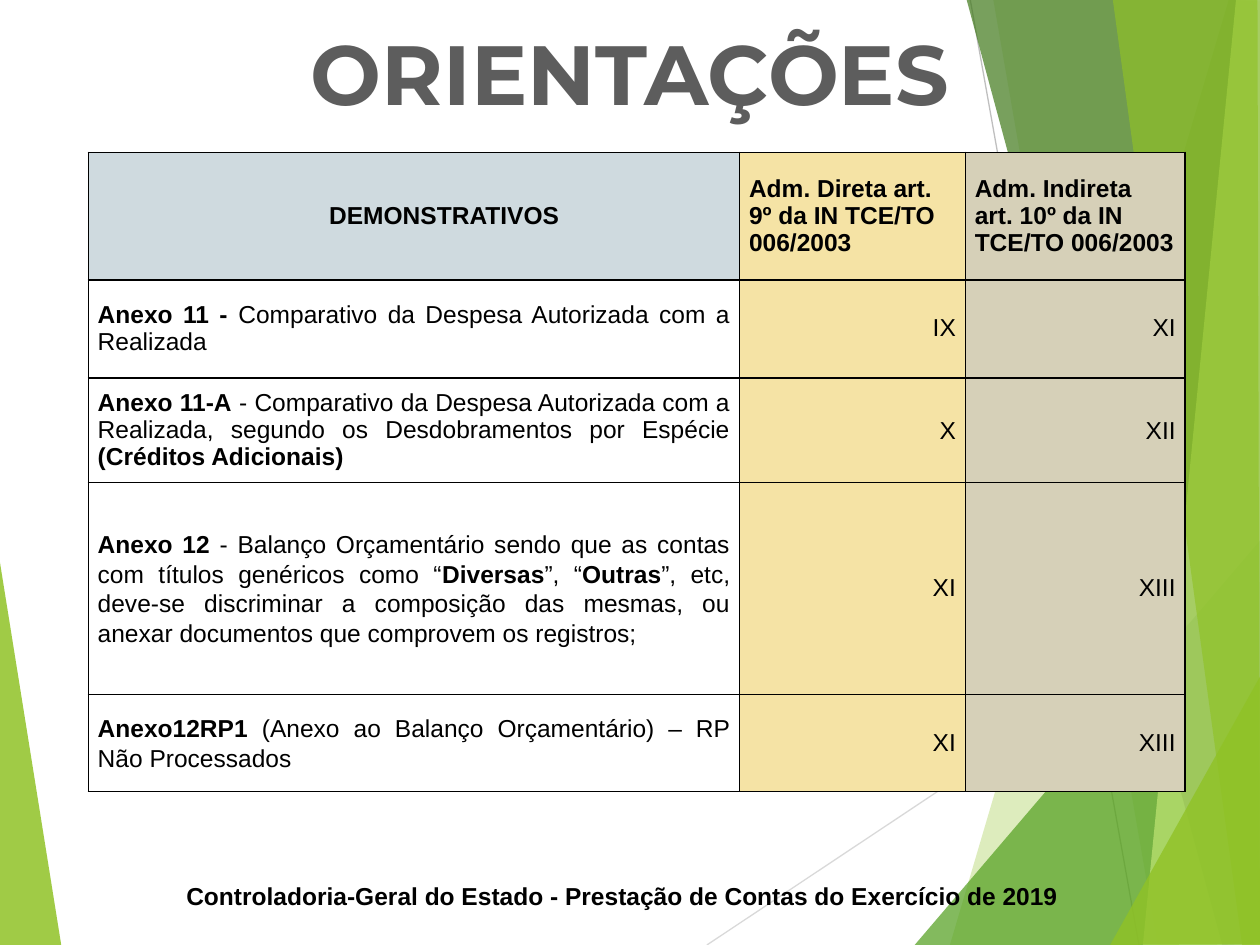
from lxml import etree
from pptx import Presentation
from pptx.dml.color import RGBColor
from pptx.enum import shapes, text
from pptx.oxml import ns
from pptx.util import Cm, Pt

# Colours
BLACK = RGBColor(0, 0, 0)
TITLE_GREY = RGBColor(0x5D, 0x5D, 0x5D)
LIME = RGBColor(0x90, 0xC2, 0x26)
GREEN = RGBColor(0x54, 0xA0, 0x21)
DARK_GREEN = RGBColor(0x3F, 0x78, 0x19)
PALE_LIME = RGBColor(0xC0, 0xE4, 0x74)
LIGHT_GREY = RGBColor(0xD9, 0xD9, 0xD9)
MID_GREY = RGBColor(0xBF, 0xBF, 0xBF)
BLUE_GREY = RGBColor(0xCF, 0xDA, 0xDF)
SAND = RGBColor(0xF5, 0xE3, 0xA5)
STONE = RGBColor(0xD6, 0xD0, 0xB8)

# Content: ** switches bold on and off
TITLE = "ORIENTAÇÕES"
FOOTER = "Controladoria-Geral do Estado - Prestação de Contas do Exercício de 2019"
HEADER = [
    "**DEMONSTRATIVOS**",
    "**Adm. Direta art. 9º da IN TCE/TO 006/2003**",
    "**Adm. Indireta art. 10º da IN**\n**TCE/TO 006/2003**",
]
ANNEXES = [
    ["**Anexo 11 - **Comparativo da Despesa Autorizada com a Realizada", "IX", "XI"],
    ["**Anexo 11-A** - Comparativo da Despesa Autorizada com a Realizada, "
     "segundo os Desdobramentos por Espécie **(Créditos Adicionais)**", "X", "XII"],
    ["**Anexo 12** - Balanço Orçamentário sendo que as contas com títulos "
     "genéricos como “**Diversas**”, “**Outras**”, etc, deve-se discriminar a "
     "composição das mesmas, ou anexar documentos que comprovem os registros;",
     "XI", "XIII"],
    ["**Anexo12RP1** (Anexo ao Balanço Orçamentário) – RP Não Processados",
     "XI", "XIII"],
]
COLUMN_WIDTHS = [13.13, 4.55, 4.43]
ROW_HEIGHTS = [2.57, 1.98, 2.11, 4.27, 1.96]
TIGHT, LOOSE = 0.98, 1.07
LOOSE_CELLS = {(2, 1), (2, 2), (3, 0), (4, 0)}

# Backdrop: colour, opacity in percent, corners in cm
LEFT_FACET = (LIME, 85, [(-0.03, 11.15), (1.24, 19.08), (-0.03, 19.05)])
RAYS = [
    (LIGHT_GREY, (14.25, 19.05), (25.43, 11.61)),
    (MID_GREY, (19.56, 0), (22.96, 19.05)),
]
RIGHT_FACETS = [
    (LIME, 30, [(24.77, 0), (19.15, 19.05), (25.45, 19.08), (25.43, 0.03)]),
    (LIME, 20, [(20.02, -0.03), (23.34, 19.05), (25.43, 19.05), (25.43, -0.03)]),
    (GREEN, 72, [(18.44, 19.05), (25.4, 10.9), (25.43, 19.05)]),
    (DARK_GREEN, 70, [(19.48, -0.03), (24.64, 19.05), (25.43, 19.02), (25.43, -0.03)]),
    (PALE_LIME, 70, [(24.92, -0.03), (23.04, 19.05), (25.43, 19.05), (25.4, -0.03)]),
    (LIME, 65, [(22.43, -0.03), (25.04, 19.05), (25.4, 19.05), (25.35, -0.03)]),
    (LIME, 80, [(22.38, 19.05), (25.43, 13.59), (25.43, 19.03)]),
]


def add_facet(slide, colour, opacity, corners):
    start, *others = [(Cm(x), Cm(y)) for x, y in corners]
    outline = slide.shapes.build_freeform(*start)
    outline.add_line_segments(others, close=True)
    facet = outline.convert_to_shape()
    facet.shadow.inherit = False
    facet.line.fill.background()
    facet.fill.solid()
    facet.fill.fore_color.rgb = colour
    colour_xml = facet._element.spPr.find(ns.qn("a:solidFill"))[0]
    etree.SubElement(colour_xml, ns.qn("a:alpha"), val=str(opacity * 1000))


def add_ray(slide, colour, start, end):
    ray = slide.shapes.add_connector(
        shapes.MSO_CONNECTOR.STRAIGHT, *[Cm(v) for v in start + end])
    ray.line.color.rgb = colour
    ray.line.width = Pt(0.75)
    etree.SubElement(ray._element.spPr, ns.qn("a:effectLst"))


def style_run(run, size, font, colour, bold):
    run.font.size = Pt(size)
    run.font.name = font
    run.font.color.rgb = colour
    run.font.bold = bold


def add_caption(slide, words, box, size, font, colour):
    frame = slide.shapes.add_textbox(*[Cm(v) for v in box]).text_frame
    frame.word_wrap = True
    frame.text = words
    line = frame.paragraphs[0]
    line.alignment = text.PP_ALIGN.CENTER
    style_run(line.runs[0], size, font, colour, True)


def add_borders(cell):
    # Borders must precede the fill in the cell properties
    for place, side in enumerate(("a:lnL", "a:lnR", "a:lnT", "a:lnB")):
        border = etree.Element(ns.qn(side), w=str(Pt(1)))
        fill = etree.SubElement(border, ns.qn("a:solidFill"))
        etree.SubElement(fill, ns.qn("a:srgbClr"), val=str(BLACK))
        cell._tc.get_or_add_tcPr().insert(place, border)


def fill_cell(cell, marked_text, colour, alignment, spacing):
    cell.vertical_anchor = text.MSO_ANCHOR.MIDDLE
    cell.margin_left = cell.margin_right = Cm(0.19)
    cell.margin_top = cell.margin_bottom = 0
    if colour is None:
        cell.fill.background()
    else:
        cell.fill.solid()
        cell.fill.fore_color.rgb = colour
    add_borders(cell)
    for number, line in enumerate(marked_text.split("\n")):
        frame = cell.text_frame
        paragraph = frame.add_paragraph() if number else frame.paragraphs[0]
        paragraph.alignment = alignment
        paragraph.line_spacing = spacing
        for part, words in enumerate(line.split("**")):
            if words:
                run = paragraph.add_run()
                run.text = words
                style_run(run, 14, "Arial", BLACK, part % 2 == 1)


def add_annex_table(slide):
    rows = [HEADER] + ANNEXES
    table = slide.shapes.add_table(
        len(rows), len(HEADER), Cm(1.78), Cm(3.07),
        Cm(sum(COLUMN_WIDTHS)), Cm(sum(ROW_HEIGHTS))).table
    table.horz_banding = False
    for column, width in zip(table.columns, COLUMN_WIDTHS):
        column.width = Cm(width)
    for row, height in zip(table.rows, ROW_HEIGHTS):
        row.height = Cm(height)

    align = text.PP_ALIGN
    header_alignments = [align.CENTER, align.LEFT, align.LEFT]
    body_alignments = [align.JUSTIFY, align.RIGHT, align.RIGHT]
    for r, row in enumerate(rows):
        colours = [None if r else BLUE_GREY, SAND, STONE]
        alignments = body_alignments if r else header_alignments
        for c, words in enumerate(row):
            spacing = LOOSE if (r, c) in LOOSE_CELLS else TIGHT
            fill_cell(table.cell(r, c), words, colours[c], alignments[c], spacing)
    heading = table.cell(0, 0).text_frame.paragraphs[0]
    heading._p.get_or_add_pPr().set("indent", str(Cm(1.22)))


def main():
    deck = Presentation()
    deck.slide_width, deck.slide_height = Cm(25.4), Cm(19.05)
    slide = deck.slides.add_slide(deck.slide_layouts[6])

    # Backdrop
    add_facet(slide, *LEFT_FACET)
    for ray in RAYS:
        add_ray(slide, *ray)
    for facet in RIGHT_FACETS:
        add_facet(slide, *facet)

    # Footer, table and title
    add_caption(slide, FOOTER, (1.4, 17.63, 22.3, 0.86), 14, "Arial", BLACK)
    add_annex_table(slide)
    add_caption(slide, TITLE, (0.15, 0.3, 25.1, 2.31), 48, "Montserrat", TITLE_GREY)
    deck.save("out.pptx")


if __name__ == "__main__":
    main()
